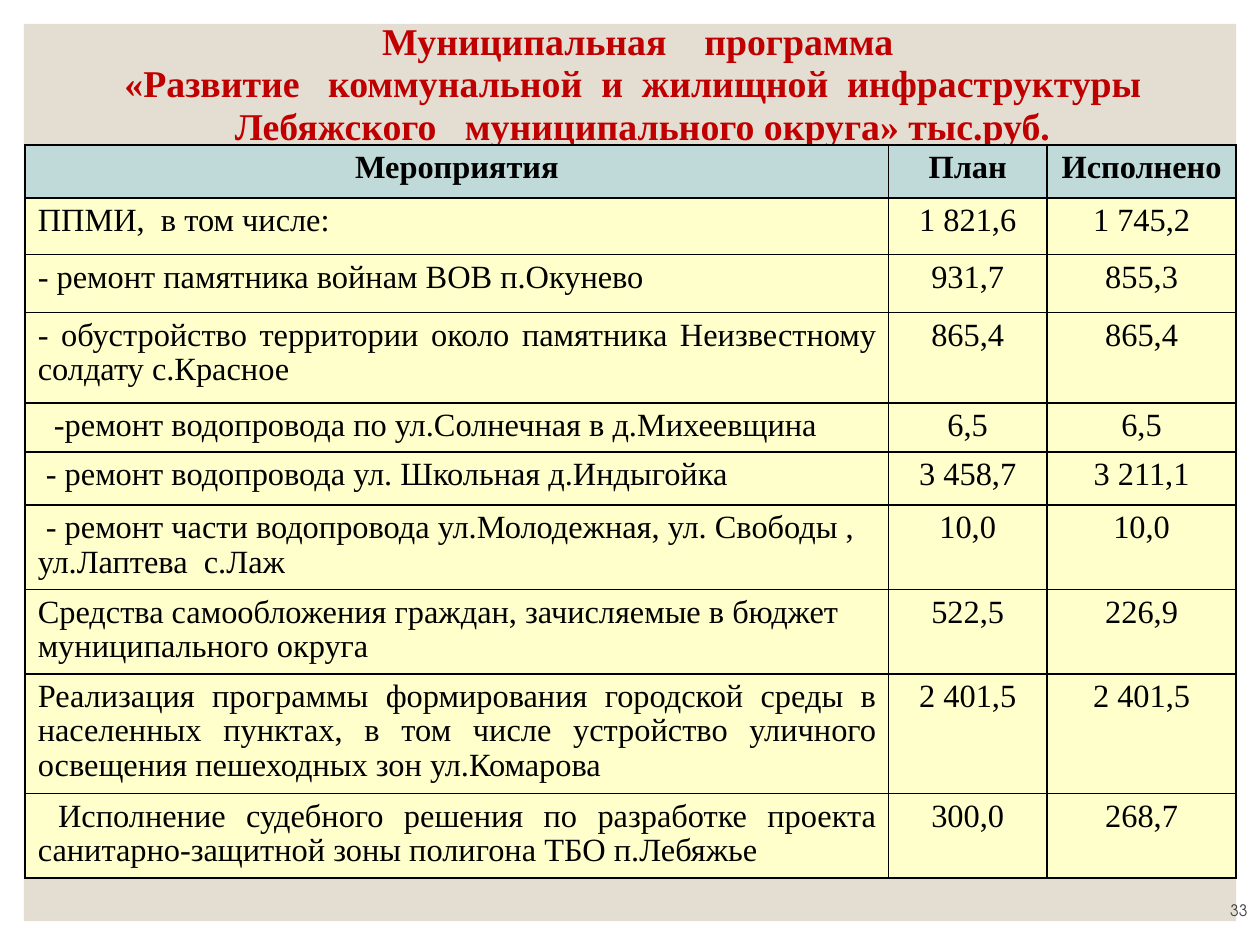
from lxml import etree
from pptx import Presentation
from pptx import util as u
from pptx.dml.color import RGBColor
from pptx.enum import shapes, text
from pptx.oxml import ns

CENTER, LEFT, RIGHT, JUSTIFY = (
    text.PP_ALIGN.CENTER, text.PP_ALIGN.LEFT, text.PP_ALIGN.RIGHT, text.PP_ALIGN.JUSTIFY)

TITLE = ("Муниципальная    программа \v«Развитие   коммунальной  и  жилищной  инфраструктуры   "
         "Лебяжского   муниципального округа» тыс.руб.")
COLUMN_WIDTHS = [6.85, 1.26, 1.5]
HEADER = ("Мероприятия", "План", "Исполнено")
ROWS = [
    (0.45, JUSTIFY, "ППМИ,  в том числе:", "1 821,6", "1 745,2"),
    (0.46, JUSTIFY, "- ремонт памятника войнам ВОВ п.Окунево", "931,7", "855,3"),
    (0.72, JUSTIFY, "- обустройство территории около памятника Неизвестному солдату с.Красное",
     "865,4", "865,4"),
    (0.39, JUSTIFY, "  -ремонт водопровода по ул.Солнечная в д.Михеевщина", "6,5", "6,5"),
    (0.42, LEFT, " - ремонт водопровода ул. Школьная д.Индыгойка", "3 458,7", "3 211,1"),
    (0.67, LEFT, " - ремонт части водопровода ул.Молодежная, ул. Свободы , ул.Лаптева  с.Лаж",
     "10,0", "10,0"),
    (0.67, LEFT, "Средства самообложения граждан, зачисляемые в бюджет муниципального округа",
     "522,5", "226,9"),
    (0.95, JUSTIFY, "Реализация программы формирования городской среды в населенных пунктах, "
     "в том числе устройство уличного освещения пешеходных зон ул.Комарова", "2 401,5", "2 401,5"),
    (0.67, JUSTIFY, " Исполнение судебного решения по разработке проекта "
     "санитарно-защитной зоны полигона ТБО п.Лебяжье", "300,0", "268,7"),
]


def color(value):
    return RGBColor.from_string(value)


def box(*lengths):
    return [u.Inches(length) for length in lengths]


class SlideBuilder:
    serif = "Times New Roman"
    sans = "TeX Gyre Adventor"
    black = "000000"
    header_fill = "C0DAD9"
    body_fill = "FFFFCC"

    def __init__(self, slide):
        self.slide = slide

    def set_text(self, frame, content, font, size, fill, align, bold=False, spacing=None):
        frame.text = content
        frame.word_wrap = True
        for paragraph in frame.paragraphs:
            paragraph.alignment = align
            paragraph.line_spacing = spacing
            paragraph.font.name = font
            paragraph.font.size = u.Pt(size)
            paragraph.font.bold = bold
            paragraph.font.color.rgb = color(fill)

    def panel(self, place, fill):
        shape = self.slide.shapes.add_shape(shapes.MSO_SHAPE.RECTANGLE, *box(*place))
        shape.shadow.inherit = False
        shape.fill.solid()
        shape.fill.fore_color.rgb = color(fill)
        shape.line.fill.background()
        self.slide.shapes.title.element.addprevious(shape.element)

    def title(self, place, content):
        shape = self.slide.shapes.title
        shape.left, shape.top, shape.width, shape.height = box(*place)
        frame = shape.text_frame
        self.set_text(frame, content, self.serif, 21.6, "C00000", CENTER, True, 0.94)
        frame.auto_size = text.MSO_AUTO_SIZE.NONE
        frame.vertical_anchor = text.MSO_ANCHOR.MIDDLE
        frame.margin_bottom = u.Inches(0.36)

    def page_number(self, place, content):
        frame = self.slide.shapes.add_textbox(*box(*place)).text_frame
        self.set_text(frame, content, self.sans, 9, "404040", RIGHT)
        frame.vertical_anchor = text.MSO_ANCHOR.BOTTOM

    def borders(self, cell):
        properties = cell._tc.get_or_add_tcPr()
        for position, side in enumerate(("lnL", "lnR", "lnT", "lnB")):
            line = etree.Element(ns.qn(f"a:{side}"), w=str(u.Pt(1)))
            fill = etree.SubElement(line, ns.qn("a:solidFill"))
            etree.SubElement(fill, ns.qn("a:srgbClr"), val=self.black)
            properties.insert(position, line)

    def cell(self, cell, content, align, fill, bold):
        self.set_text(cell.text_frame, content, self.serif, 18.5, self.black, align, bold, 0.96)
        cell.fill.solid()
        cell.fill.fore_color.rgb = color(fill)
        self.borders(cell)

    def table(self, left, top, widths, header, rows):
        records = [(0.42, CENTER, *header), *rows]
        height = sum(record[0] for record in records)
        table = self.slide.shapes.add_table(
            len(records), len(widths), *box(left, top, sum(widths), height)).table
        for column, width in zip(table.columns, widths):
            column.width = u.Inches(width)
        for index, (row_height, align, *values) in enumerate(records):
            table.rows[index].height = u.Inches(row_height)
            fill = self.body_fill if index else self.header_fill
            for column, value in enumerate(values):
                self.cell(table.cell(index, column), value,
                          CENTER if column else align, fill, index == 0)


def main():
    presentation = Presentation()
    presentation.slide_width, presentation.slide_height = box(10, 7.5)
    builder = SlideBuilder(presentation.slides.add_slide(presentation.slide_layouts[5]))
    builder.panel((0.19, 0.19, 9.62, 7.12), "E3DED1")
    builder.title((0.2, -0.27, 9.8, 2.2), TITLE)
    builder.table(0.2, 1.15, COLUMN_WIDTHS, HEADER, ROWS)
    builder.page_number((9.17, 7.08, 0.83, 0.27), "33")
    presentation.save("out.pptx")


if __name__ == "__main__":
    main()
